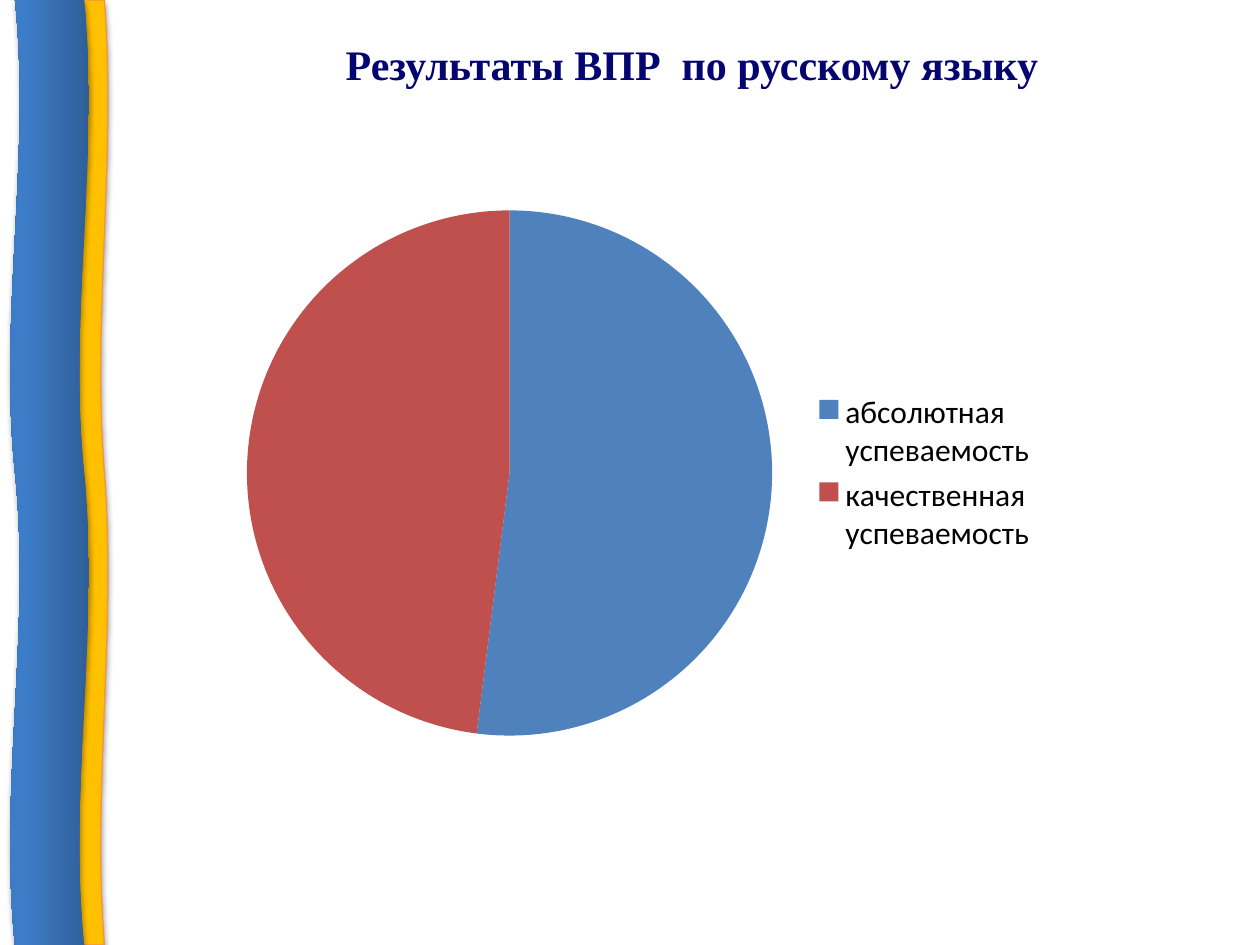
from lxml import etree
from pptx import Presentation
from pptx.chart.data import CategoryChartData
from pptx.dml.color import RGBColor
from pptx.enum.chart import XL_CHART_TYPE, XL_LEGEND_POSITION
from pptx.enum.shapes import MSO_SHAPE
from pptx.enum.text import MSO_ANCHOR, PP_ALIGN
from pptx.oxml import parse_xml
from pptx.oxml.ns import nsdecls
from pptx.util import Pt

PIE = XL_CHART_TYPE.PIE
RIGHT = XL_LEGEND_POSITION.RIGHT
WAVE = MSO_SHAPE.DOUBLE_WAVE
MIDDLE = MSO_ANCHOR.MIDDLE
CENTER = PP_ALIGN.CENTER

GOLD = RGBColor(0xFF, 0xC0, 0x00)
ORANGE = RGBColor(0xF6, 0x92, 0x40)
DEEP = RGBColor(0x2F, 0x5F, 0x99)
AZURE = RGBColor(0x3D, 0x7C, 0xC7)
NAVY = RGBColor(0x05, 0x05, 0x71)
BLACK = RGBColor(0x00, 0x00, 0x00)
BLUE = RGBColor(0x4F, 0x81, 0xBD)
RED = RGBColor(0xC0, 0x50, 0x4D)

SHADE = (
    f'<a:effectLst {nsdecls("a")}><a:outerShdw blurRad="39370" dist="22860" '
    'dir="5400000" rotWithShape="0"><a:srgbClr val="000000">'
    '<a:alpha val="35000"/></a:srgbClr></a:outerShdw></a:effectLst>'
)
TITLE = {"name": "Times New Roman", "size": Pt(24), "bold": True}
LABEL = {"name": "Calibri", "size": Pt(18)}


def px(num):
    return round(num * 914400 / 126)


class Deck:
    """Holds the style and the current slide."""

    def __init__(self, width, height):
        self.prs = Presentation()
        self.prs.slide_width, self.prs.slide_height = px(width), px(height)
        self.slide = self.prs.slides.add_slide(self.prs.slide_layouts[6])

    def style(self, font, form, color):
        for key, value in form.items():
            setattr(font, key, value)
        font.color.rgb = color

    def wave(self, box, turn, fills, edge=None):
        shape = self.slide.shapes.add_shape(WAVE, *map(px, box))
        shape.rotation = turn
        if len(fills) == 1:
            shape.fill.solid()
            shape.fill.fore_color.rgb = fills[0]
        else:
            shape.fill.gradient()
            shape.fill.gradient_angle = 90
            for stop, color, place in zip(shape.fill.gradient_stops, fills, (0, 0.8)):
                stop.color.rgb = color
                stop.position = place
        if edge:
            shape.line.color.rgb = edge
            shape.line.width = Pt(0.75)
        else:
            shape.line.fill.background()
        shape.shadow.inherit = False
        props = shape.element.spPr
        old = props.find("{*}effectLst")
        props.replace(old, parse_xml(etree.tostring(etree.fromstring(SHADE))))

    def text(self, box, words, form, color):
        frame = self.slide.shapes.add_textbox(*map(px, box)).text_frame
        frame.word_wrap = True
        frame.vertical_anchor = MIDDLE
        para = frame.paragraphs[0]
        para.alignment = CENTER
        run = para.add_run()
        run.text = words
        self.style(run.font, form, color)

    def pie(self, box, parts, form, color):
        data = CategoryChartData()
        data.categories = [name for name, _, _ in parts]
        data.add_series("Series 1", [value for _, value, _ in parts])
        chart = self.slide.shapes.add_chart(PIE, *map(px, box), data).chart
        self.style(chart.font, form, color)
        chart.has_title = False
        chart.has_legend = True
        chart.legend.position = RIGHT
        chart.legend.include_in_layout = False
        plot = chart.plots[0]
        plot.vary_by_categories = True
        for index, (_, _, tint) in enumerate(parts):
            fill = plot.series[0].points[index].format.fill
            fill.solid()
            fill.fore_color.rgb = tint


def main():
    deck = Deck(1260, 945)
    deck.wave((-394, 443, 945, 59), 90, [GOLD], ORANGE)
    deck.wave((-423, 433, 945, 79), 270, [DEEP, AZURE])
    deck.text((183, 32, 1018, 63), "Результаты ВПР  по русскому языку", TITLE, NAVY)
    parts = [
        ("абсолютная успеваемость", 52, BLUE),
        ("качественная успеваемость", 48, RED),
    ]
    deck.pie((210, 193, 840, 560), parts, LABEL, BLACK)
    deck.prs.save("out.pptx")


if __name__ == "__main__":
    main()
